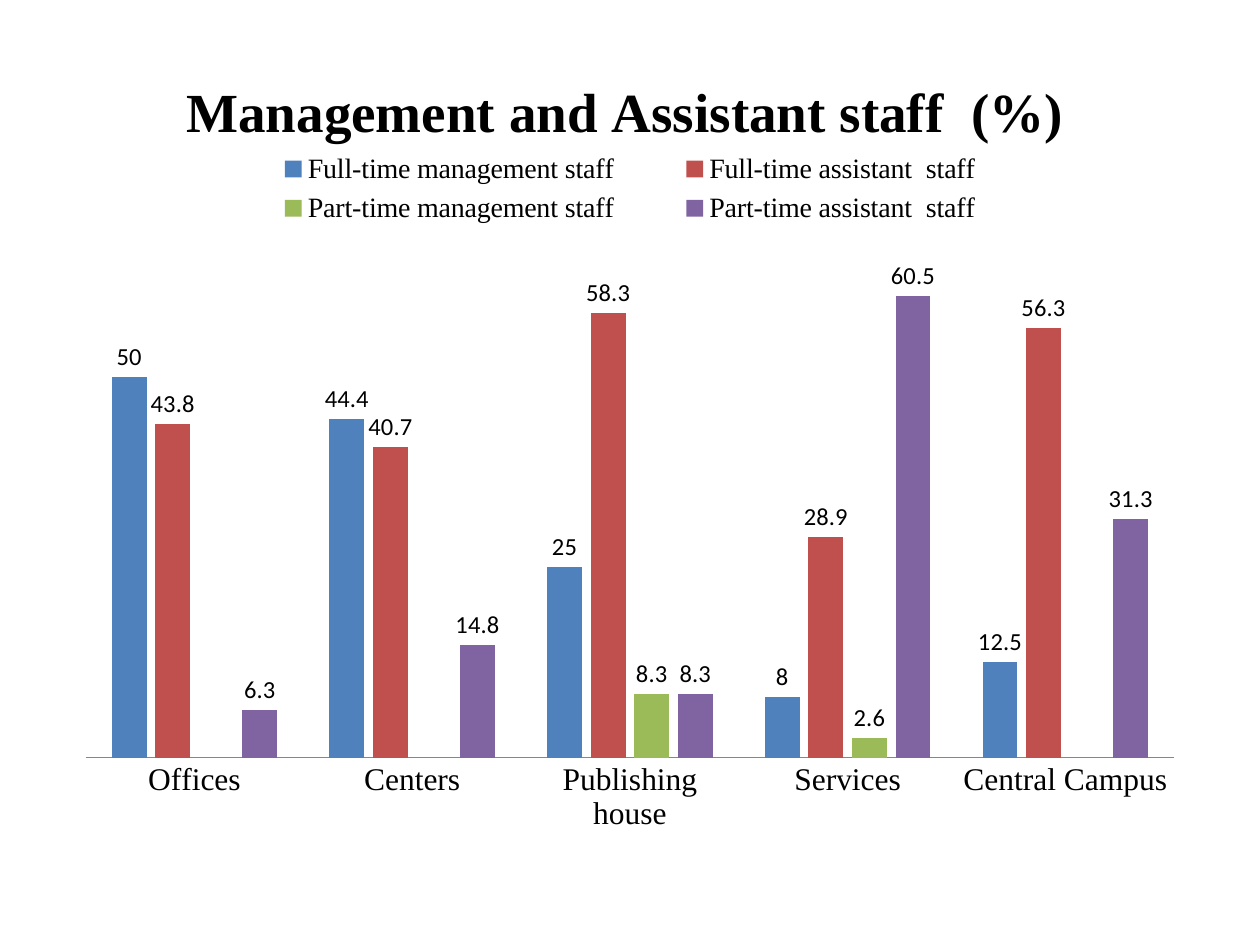
import pptx
import pptx.chart.data
import pptx.dml.color
import pptx.enum.chart
import pptx.oxml
import pptx.oxml.ns
import pptx.util

SERIF = "Times New Roman"
CATEGORIES = ["Offices", "Centers", "Publishing house", "Services", "Central Campus"]
STAFF_SERIES = [
    ("Full-time management staff", "4F81BD", [50, 44.4, 25, 8, 12.5]),
    ("Full-time assistant  staff", "C0504D", [43.8, 40.7, 58.3, 28.9, 56.3]),
    ("Part-time management staff", "9BBB59", [None, None, 8.3, 2.6, None]),
    ("Part-time assistant  staff", "8064A2", [6.3, 14.8, 8.3, 60.5, 31.3]),
]
TITLE_LAYOUT = {"x": 0.1, "y": 0.01}
LEGEND_LAYOUT = {"x": 0.14, "y": 0.11, "w": 0.72, "h": 0.11}
PLOT_LAYOUT = {"x": 0.02, "y": 0.21, "w": 0.96, "h": 0.68}


def color(hex_value):
    return pptx.dml.color.RGBColor.from_string(hex_value)


def set_values(target, values):
    for name, value in values.items():
        setattr(target, name, value)


def style_font(font, size, name, bold=False):
    set_values(font, {"size": pptx.util.Pt(size), "name": name, "bold": bold})
    font.color.rgb = color("000000")


def place_part(element, index, fractions, target=""):
    for old_layout in element.findall(pptx.oxml.ns.qn("c:layout")):
        element.remove(old_layout)
    modes = '<c:xMode val="edge"/><c:yMode val="edge"/>'
    sizes = "".join(f'<c:{key} val="{value}"/>' for key, value in fractions.items())
    layout = pptx.oxml.parse_xml(
        f'<c:layout {pptx.oxml.ns.nsdecls("c")}>'
        f"<c:manualLayout>{target}{modes}{sizes}</c:manualLayout></c:layout>"
    )
    element.insert(index, layout)


def add_staff_chart(page):
    data = pptx.chart.data.CategoryChartData()
    data.categories = CATEGORIES
    for name, fill, values in STAFF_SERIES:
        data.add_series(name, values)
    bounds = [pptx.util.Pt(length) for length in (36, 33.84, 648, 448.56)]
    kind = pptx.enum.chart.XL_CHART_TYPE.COLUMN_CLUSTERED
    chart = page.shapes.add_chart(kind, *bounds, data).chart
    style_font(chart.font, 10, "Calibri")
    return chart


def style_title(chart, text):
    chart.has_title = True
    frame = chart.chart_title.text_frame
    frame.word_wrap = False
    span = frame.paragraphs[0].add_run()
    span.text = text
    style_font(span.font, 31.5, SERIF, True)
    place_part(chart.chart_title._element, 1, TITLE_LAYOUT)


def style_legend(chart):
    chart.has_legend = True
    set_values(chart.legend, {
        "position": pptx.enum.chart.XL_LEGEND_POSITION.TOP,
        "include_in_layout": False,
    })
    style_font(chart.legend.font, 16, SERIF)
    place_part(chart.legend._element, 1, LEGEND_LAYOUT)


def style_axes(chart):
    no_tick = pptx.enum.chart.XL_TICK_MARK.NONE
    category_axis = chart.category_axis
    set_values(category_axis, {"major_tick_mark": no_tick, "minor_tick_mark": no_tick})
    category_axis.format.line.color.rgb = color("868686")
    category_axis.format.line.width = pptx.util.Pt(0.75)
    style_font(category_axis.tick_labels.font, 18, SERIF)
    set_values(chart.value_axis, {
        "visible": False,
        "has_major_gridlines": False,
        "minimum_scale": 0,
        "maximum_scale": 70,
    })


def style_columns(chart):
    plot = chart.plots[0]
    set_values(plot, {"gap_width": 150, "overlap": -25, "vary_by_categories": False})
    for series, (name, fill, values) in zip(plot.series, STAFF_SERIES):
        series.format.fill.solid()
        series.format.fill.fore_color.rgb = color(fill)
        series.invert_if_negative = False
        labels = series.data_labels
        set_values(labels, {
            "show_value": True,
            "position": pptx.enum.chart.XL_LABEL_POSITION.OUTSIDE_END,
        })
        style_font(labels.font, 14, "Calibri")
    plot_area = plot._element.getparent()
    place_part(plot_area, 0, PLOT_LAYOUT, '<c:layoutTarget val="inner"/>')


def main():
    deck = pptx.Presentation()
    set_values(deck, {"slide_width": pptx.util.Pt(720), "slide_height": pptx.util.Pt(540)})
    page = deck.slides.add_slide(deck.slide_layouts[6])
    chart = add_staff_chart(page)
    style_title(chart, "Management and Assistant staff  (%)")
    style_legend(chart)
    style_axes(chart)
    style_columns(chart)
    deck.save("out.pptx")


if __name__ == "__main__":
    main()
